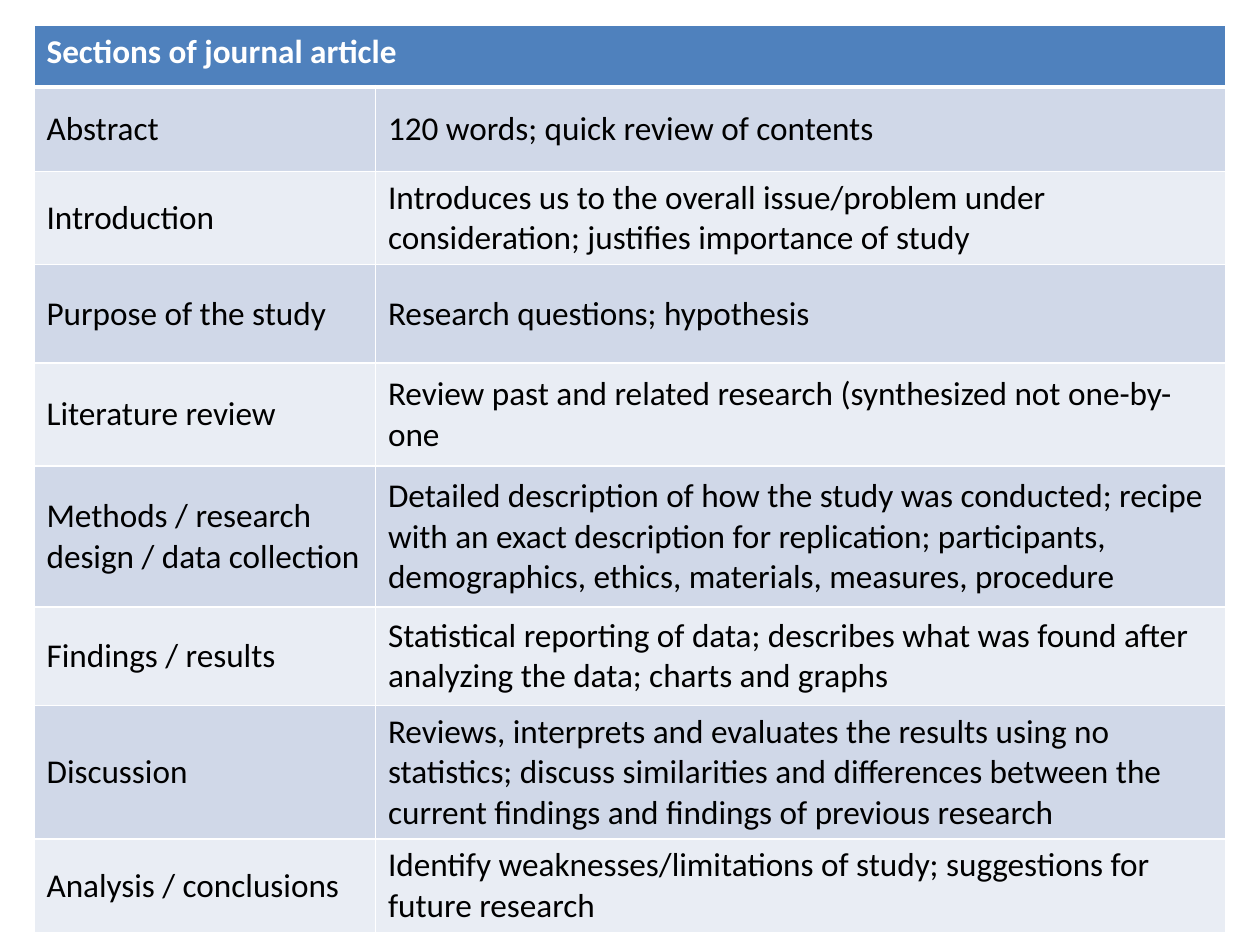
from lxml import etree
from pptx import Presentation
from pptx import util as u
from pptx.dml.color import RGBColor
from pptx.enum import text
from pptx.oxml import ns

FONT, SIZE = "Calibri", 19
WHITE, BLACK, HEADER_BLUE = "FFFFFF", "000000", "4F81BD"
BANDS = ("D0D8E8", "E9EDF4")

TITLE = "Sections of journal article"
SECTIONS = [
    ("Abstract", "120 words; quick review of contents"),
    ("Introduction",
     "Introduces us to the overall issue/problem under consideration; "
     "justifies importance of study"),
    ("Purpose of the study", "Research questions; hypothesis"),
    ("Literature review",
     "Review past and related research (synthesized not one-by-one"),
    ("Methods / research design / data collection",
     "Detailed description of how the study was conducted; recipe with an "
     "exact description for replication; participants, demographics, ethics, "
     "materials, measures, procedure"),
    ("Findings / results",
     "Statistical reporting of data; describes what was found after "
     "analyzing the data; charts and graphs"),
    ("Discussion",
     "Reviews, interprets and evaluates the results using no statistics; "
     "discuss similarities and differences between the current findings and "
     "findings of previous research"),
    ("Analysis / conclusions",
     "Identify weaknesses/limitations of study; suggestions for future research"),
]
COLUMN_WIDTHS = (2.71, 6.75)
ROW_HEIGHTS = (0.49, 0.67, 0.67, 0.78, 0.82, 1.12, 0.78, 0.67, 0.56)


def color(hex_value):
    return RGBColor.from_string(hex_value)


def set_borders(cell, top=1, bottom=1):
    """Draw white cell borders; widths are in points."""
    properties = cell._tc.get_or_add_tcPr()
    for side, width in (("L", 1), ("R", 1), ("T", top), ("B", bottom)):
        line = etree.SubElement(properties, ns.qn(f"a:ln{side}"), w=str(u.Pt(width)))
        fill = etree.SubElement(line, ns.qn("a:solidFill"))
        etree.SubElement(fill, ns.qn("a:srgbClr"), val=WHITE)


def fill_cell(cell, wording, background, ink=BLACK, bold=False,
              anchor=text.MSO_ANCHOR.MIDDLE):
    cell.fill.solid()
    cell.fill.fore_color.rgb = color(background)
    cell.vertical_anchor = anchor
    cell.text_frame.text = wording
    font = cell.text_frame.paragraphs[0].runs[0].font
    font.name, font.size, font.bold = FONT, u.Pt(SIZE), bold
    font.color.rgb = color(ink)


def add_sections_table(page):
    frame = page.shapes.add_table(
        len(ROW_HEIGHTS), len(COLUMN_WIDTHS), u.Inches(0.27), u.Inches(0.2),
        u.Inches(sum(COLUMN_WIDTHS)), u.Inches(sum(ROW_HEIGHTS)))
    table = frame.table
    for column, width in zip(table.columns, COLUMN_WIDTHS):
        column.width = u.Inches(width)
    for row, height in zip(table.rows, ROW_HEIGHTS):
        row.height = u.Inches(height)

    # Header across both columns
    table.cell(0, 0).merge(table.cell(0, 1))
    for cell in table.rows[0].cells:
        set_borders(cell, bottom=3)
    fill_cell(table.cell(0, 0), TITLE, HEADER_BLUE, WHITE, True,
              text.MSO_ANCHOR.TOP)

    # Banded section rows
    for index, section in enumerate(SECTIONS):
        for cell, wording in zip(table.rows[index + 1].cells, section):
            set_borders(cell, top=3 if index == 0 else 1)
            fill_cell(cell, wording, BANDS[index % 2])


def main():
    deck = Presentation()
    deck.slide_width, deck.slide_height = u.Inches(10), u.Inches(7.5)
    page = deck.slides.add_slide(deck.slide_layouts[6])
    add_sections_table(page)
    deck.save("out.pptx")


if __name__ == "__main__":
    main()
